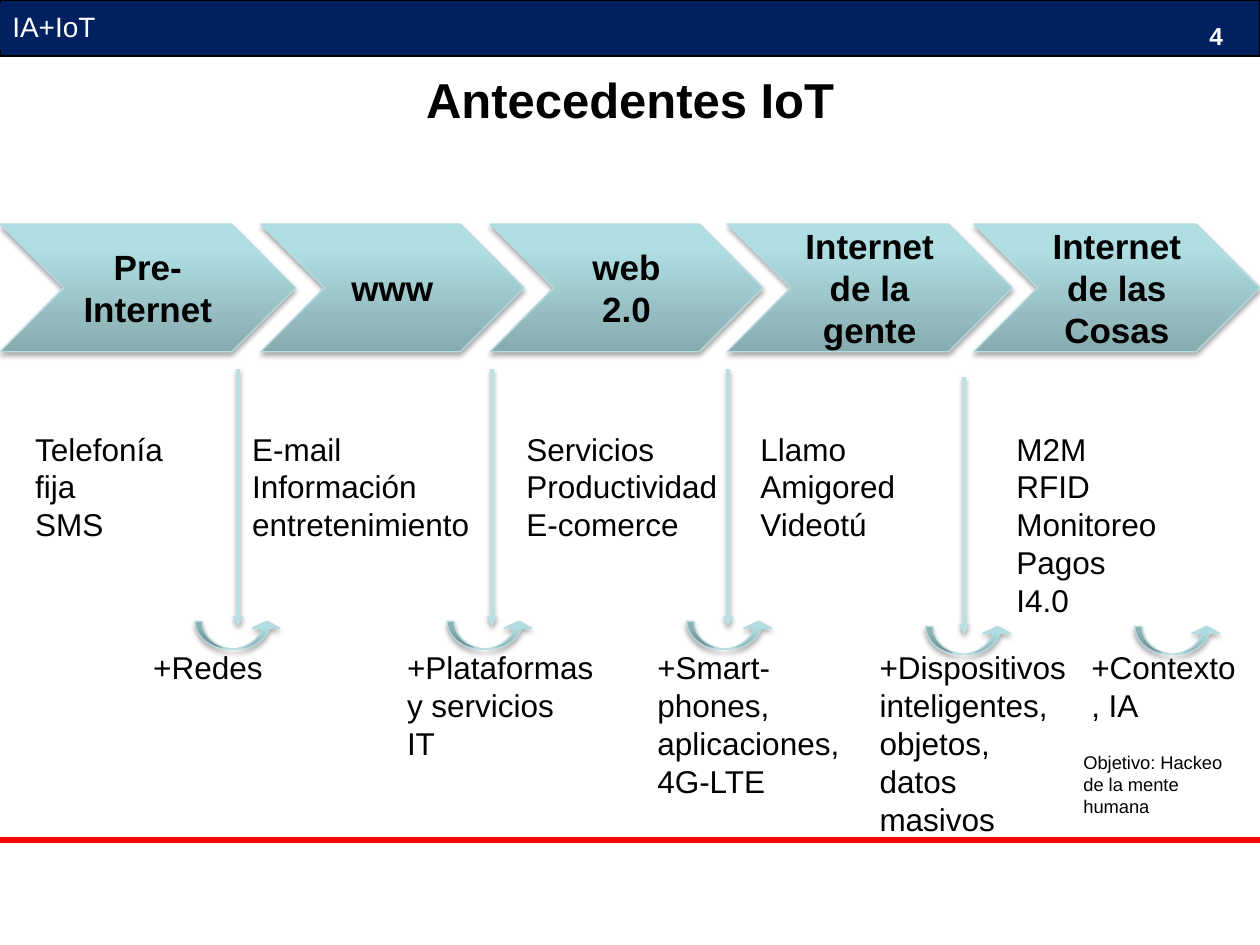
import copy

import lxml.etree
import pptx
import pptx.dml.color
import pptx.enum.shapes
import pptx.enum.text
import pptx.oxml.ns
import pptx.util

Pt = pptx.util.Pt
RGBColor = pptx.dml.color.RGBColor
SHAPE = pptx.enum.shapes.MSO_SHAPE
ALIGN = pptx.enum.text.PP_ALIGN
ANCHOR = pptx.enum.text.MSO_ANCHOR
qn = pptx.oxml.ns.qn

NAVY = RGBColor(0x00, 0x20, 0x60)
RED = RGBColor(0xFF, 0x00, 0x00)
BLACK = RGBColor(0x00, 0x00, 0x00)
WHITE = RGBColor(0xFF, 0xFF, 0xFF)
AQUA = RGBColor(0xBB, 0xE0, 0xE3)
EDGE = RGBColor(0xB6, 0xDC, 0xDF)
GRADIENT = [
    (0, RGBColor(0x87, 0xAB, 0xAE)),
    (0.8, RGBColor(0xAF, 0xDE, 0xE2)),
    (1, RGBColor(0xAF, 0xE0, 0xE4)),
]

STAGES = [
    ("Pre-Internet", 0, 169),
    ("www", 149, 150.5),
    ("web 2.0", 280, 156),
    ("Internet de la gente", 415.5, 163),
    ("Internet de las Cosas", 556.5, 163.5),
]
TOPICS = [
    (["Telefonía fija", "SMS"], 13, 111, 51),
    (["E-mail", "Información", "entretenimiento"], 137, 150.5, 73),
    (["Servicios", "Productividad", "E-comerce"], 293.75, 125.5, 73),
    (["Llamo", "Amigored", "Videotú"], 427.5, 111, 73),
    (["M2M", "RFID", "Monitoreo", "Pagos", "I4.0"], 573.75, 111, 116.5),
]
ADDITIONS = [
    (["+Redes"], 80.5, 111, 29),
    (["+Plataformas y servicios", "IT"], 225.5, 126, 73),
    (["+Smart-phones, aplicaciones,", "4G-LTE"], 368.5, 121, 94.5),
    (["+Dispositivos inteligentes, objetos, datos masivos"], 495.5, 121, 116.5),
    (["+Contexto, IA"], 616.5, 98, 51),
]
DOWN_ARROWS = [(136, 0), (281, 0), (416, 0), (551, 4.5)]
CURVED_ARROWS = [(111.5, 0), (255.5, 0), (392.5, 0), (529, 3), (648.5, 3)]


def write(shape, lines, size, color=BLACK, bold=False, align=ALIGN.LEFT):
    frame = shape.text_frame
    frame.word_wrap = True
    frame.text = "\n".join(lines)
    for para in frame.paragraphs:
        para.alignment = align
        for span in para.runs:
            span.font.name = "Arial"
            span.font.size = Pt(size)
            span.font.bold = bold
            span.font.color.rgb = color


def add_text(page, box, lines, size, **style):
    shape = page.shapes.add_textbox(*map(Pt, box))
    write(shape, lines, size, **style)
    shape.text_frame.auto_size = pptx.enum.text.MSO_AUTO_SIZE.SHAPE_TO_FIT_TEXT
    return shape


def add_line(page, start, end, color, weight):
    line = page.shapes.add_connector(
        pptx.enum.shapes.MSO_CONNECTOR.STRAIGHT, *map(Pt, start + end)
    )
    line.line.color.rgb = color
    line.line.width = Pt(weight)
    lxml.etree.SubElement(line._element.spPr, qn("a:effectLst"))
    return line


def add_shadow(shape, alpha, distance):
    effects = shape._element.spPr.find(qn("a:effectLst"))
    shadow = lxml.etree.SubElement(
        effects, qn("a:outerShdw"), blurRad=str(Pt(3.1)), dist=str(Pt(distance)),
        dir="5400000", rotWithShape="0",
    )
    black = lxml.etree.SubElement(shadow, qn("a:srgbClr"), val=str(BLACK))
    lxml.etree.SubElement(black, qn("a:alpha"), val=str(alpha * 1000))


def add_glossy_shape(page, kind, box):
    shape = page.shapes.add_shape(kind, *map(Pt, box))
    shape.fill.gradient()
    shape.fill.gradient_angle = 90
    stop_list = shape._element.spPr.find(qn("a:gradFill")).find(qn("a:gsLst"))
    stop_list.append(copy.deepcopy(stop_list[-1]))
    for stop, (position, color) in zip(shape.fill.gradient_stops, GRADIENT):
        stop.position = position
        stop.color.rgb = color
    shape.line.color.rgb = EDGE
    shape.line.width = Pt(0.75)
    shape.shadow.inherit = False
    add_shadow(shape, 35, 1.8)
    return shape


def add_header(page, box):
    left, top, width, height = box
    band = page.shapes.add_shape(SHAPE.RECTANGLE, *map(Pt, box))
    band.shadow.inherit = False
    band.fill.solid()
    band.fill.fore_color.rgb = NAVY
    band.line.color.rgb = BLACK
    band.line.width = Pt(0.75)
    course = add_text(page, (left, top + 2, 336, 26.5), ["IA+IoT"], 16, color=WHITE)
    course.fill.solid()
    course.fill.fore_color.rgb = NAVY
    number = add_text(
        page, (left + width - 182, top + 6, 168, 29), ["4"], 14,
        color=WHITE, bold=True, align=ALIGN.RIGHT,
    )
    number.text_frame.auto_size = pptx.enum.text.MSO_AUTO_SIZE.NONE
    number.text_frame.vertical_anchor = ANCHOR.MIDDLE


def add_stages(page, box):
    left, top, _, height = box
    for name, offset, width in STAGES:
        chevron = add_glossy_shape(page, SHAPE.CHEVRON, (left + offset, top, width, height))
        write(chevron, [name], 20, bold=True, align=ALIGN.CENTER)
        chevron.text_frame.vertical_anchor = ANCHOR.MIDDLE


def add_columns(page, box, columns):
    left, top = box[:2]
    for lines, offset, width, height in columns:
        add_text(page, (left + offset, top, width, height), lines, 18)


def add_down_arrows(page, box):
    left, top, _, height = box
    for offset, drop in DOWN_ARROWS:
        x, y = left + offset, top + drop
        arrow = add_line(page, (x, y), (x, y + height), AQUA, 2)
        lxml.etree.SubElement(arrow.line._ln, qn("a:tailEnd"), type="triangle")
        add_shadow(arrow, 38, 1.6)


def add_curved_arrows(page, box):
    left, top, _, height = box
    for offset, drop in CURVED_ARROWS:
        arrow = add_glossy_shape(
            page, SHAPE.CURVED_UP_ARROW, (left + offset, top + drop, 49, height)
        )
        for index, value in enumerate((0.25, 0.99, 0.25)):
            arrow.adjustments[index] = value


def main():
    deck = pptx.Presentation()
    deck.slide_width, deck.slide_height = Pt(720), Pt(540)
    page = deck.slides.add_slide(deck.slide_layouts[6])
    add_header(page, (0, 0, 720, 32))
    add_line(page, (0, 480), (720, 480), RED, 3)
    add_text(page, (54.5, 36, 611, 41), ["Antecedentes IoT"], 28, bold=True, align=ALIGN.CENTER)
    add_stages(page, (0, 128, 720, 73))
    add_columns(page, (0, 242, 720, 116.5), TOPICS)
    add_down_arrows(page, (0, 211, 720, 147))
    add_columns(page, (0, 367, 720, 116.5), ADDITIONS)
    add_curved_arrows(page, (0, 355, 720, 16))
    add_text(page, (612, 425.5, 107, 34), ["Objetivo: Hackeo de la mente humana"], 10.5)
    deck.save("out.pptx")


if __name__ == "__main__":
    main()
